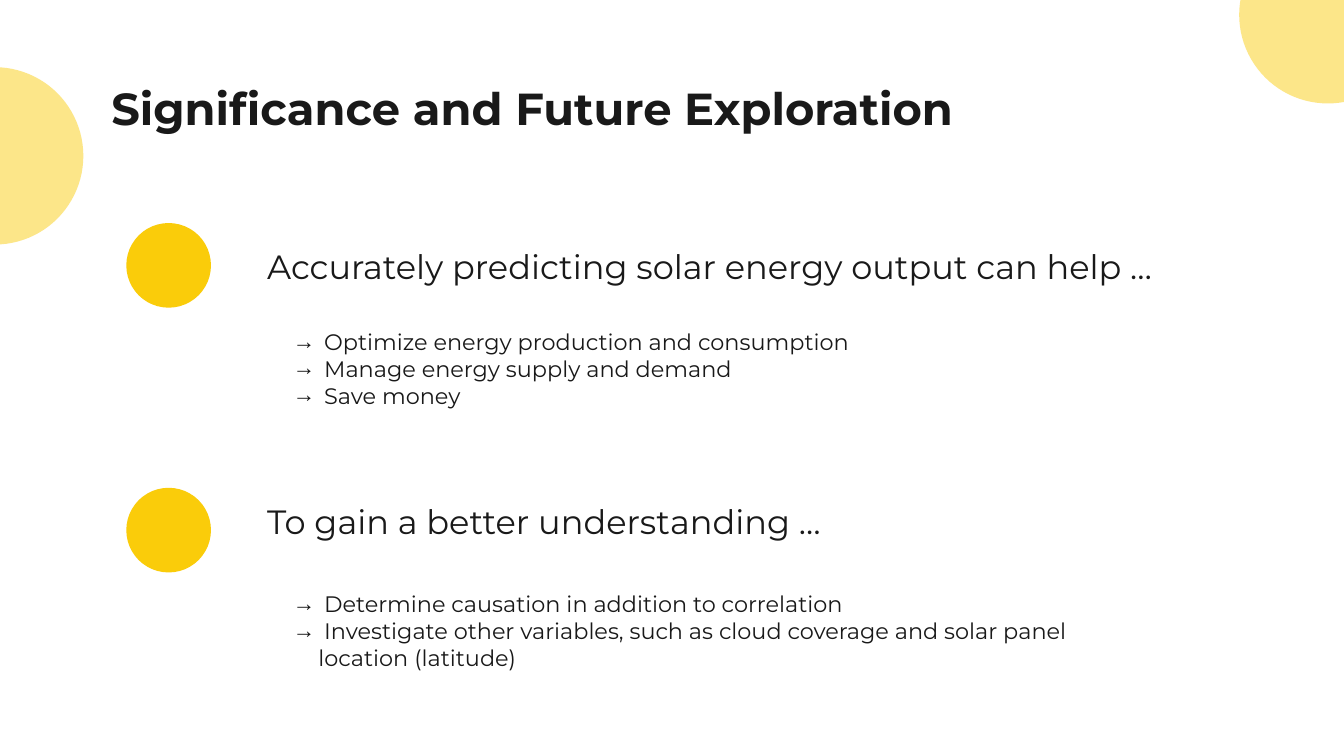
from dataclasses import dataclass

from lxml import etree
from pptx import Presentation
from pptx.dml.color import RGBColor
from pptx.enum import shapes, text
from pptx.oxml import ns
from pptx.util import Inches, Pt


@dataclass(frozen=True)
class Theme:
    font: str = "Montserrat"
    bullet_font: str = "Arial"
    ink: str = "191919"
    sun: str = "FACC0A"
    paper: str = "FFFFFF"
    glow_alpha: int = 48
    title_size: int = 24
    heading_size: int = 18
    item_size: int = 12


THEME = Theme()

TITLE = "Significance and Future Exploration"
SECTIONS = [
    {
        "heading": "Accurately predicting solar energy output can help …",
        "items": [
            "Optimize energy production and consumption",
            "Manage energy supply and demand",
            "Save money",
        ],
        "tops": {"dot": 1.66, "heading": 1.68, "items": 2.34},
    },
    {
        "heading": "To gain a better understanding …",
        "items": [
            "Determine causation in addition to correlation",
            "Investigate other variables, such as cloud coverage and solar panel location (latitude)",
        ],
        "tops": {"dot": 3.63, "heading": 3.58, "items": 4.29},
    },
]
GLOWS = [(-0.7, 0.5), (9.22, -0.55)]
GLOW_SIZE = 1.32
DOT_SIZE = 0.63
BULLET = "→"
BULLET_INDENT = 0.19
INSET = 0.1


def add_circle(page, left, top, size, alpha=None):
    circle = page.shapes.add_shape(
        shapes.MSO_SHAPE.OVAL, Inches(left), Inches(top), Inches(size), Inches(size)
    )
    circle.shadow.inherit = False
    circle.line.fill.background()
    circle.fill.solid()
    circle.fill.fore_color.rgb = RGBColor.from_string(THEME.sun)
    if alpha:
        color = circle.fill._xPr.find(".//" + ns.qn("a:srgbClr"))
        etree.SubElement(color, ns.qn("a:alpha"), val=str(alpha * 1000))


def add_text(page, area, lines, size, bold=False, anchor=text.MSO_ANCHOR.TOP):
    box = page.shapes.add_textbox(*map(Inches, area))
    frame = box.text_frame
    frame.word_wrap = True
    frame.vertical_anchor = anchor
    frame.margin_left = frame.margin_right = Inches(INSET)
    frame.margin_top = frame.margin_bottom = Inches(INSET)
    frame.text = "\n".join(lines)
    for para in frame.paragraphs:
        for span in para.runs:
            span.font.name = THEME.font
            span.font.size = Pt(size)
            span.font.bold = bold
            span.font.color.rgb = RGBColor.from_string(THEME.ink)
    return frame


def add_bullets(frame):
    for para in frame.paragraphs:
        properties = para._p.get_or_add_pPr()
        properties.set("marL", str(Inches(BULLET_INDENT)))
        properties.set("indent", str(-Inches(BULLET_INDENT)))
        color = etree.SubElement(properties, ns.qn("a:buClr"))
        etree.SubElement(color, ns.qn("a:srgbClr"), val=THEME.ink)
        etree.SubElement(properties, ns.qn("a:buFont"), typeface=THEME.bullet_font)
        etree.SubElement(properties, ns.qn("a:buChar"), char=BULLET)


def add_section(page, section):
    tops = section["tops"]
    add_circle(page, 0.94, tops["dot"], DOT_SIZE)
    add_text(
        page,
        (1.89, tops["heading"], 7.17, 0.55),
        [section["heading"]],
        THEME.heading_size,
        anchor=text.MSO_ANCHOR.BOTTOM,
    )
    items = [f" {item}" for item in section["items"]]
    add_bullets(add_text(page, (2.08, tops["items"], 6.28, 1.22), items, THEME.item_size))


def main():
    deck = Presentation()
    deck.slide_width = Inches(10)
    deck.slide_height = deck.slide_width * 9 // 16
    page = deck.slides.add_slide(deck.slide_layouts[6])
    page.background.fill.solid()
    page.background.fill.fore_color.rgb = RGBColor.from_string(THEME.paper)

    add_text(page, (0.73, 0.5, 7.85, 0.63), [TITLE], THEME.title_size, bold=True)
    for left, top in GLOWS:
        add_circle(page, left, top, GLOW_SIZE, THEME.glow_alpha)
    for section in SECTIONS:
        add_section(page, section)

    deck.save("out.pptx")


if __name__ == "__main__":
    main()
